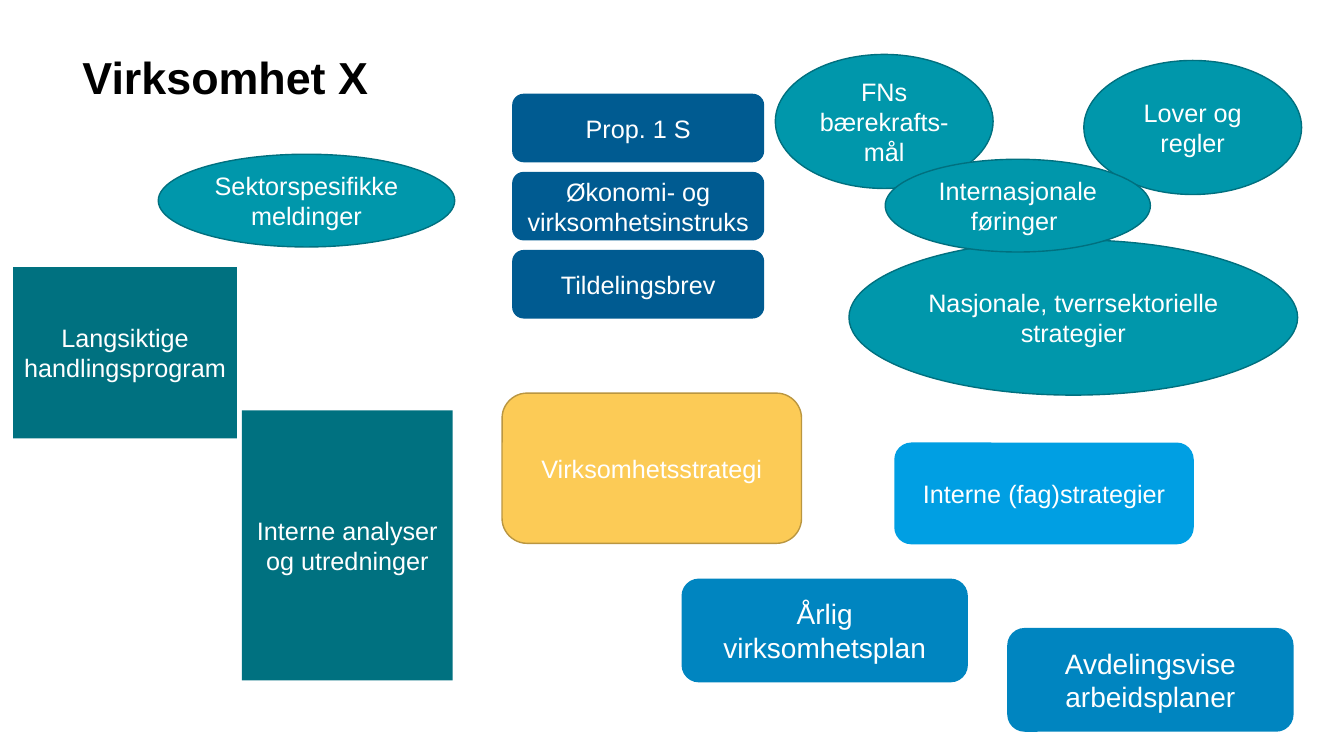
from pptx import Presentation
from pptx.dml.color import RGBColor
from pptx.enum import shapes, text
from pptx.util import Inches, Pt

WHITE = RGBColor(0xFF, 0xFF, 0xFF)
BLACK = RGBColor(0x00, 0x00, 0x00)
NAVY = RGBColor(0x00, 0x5B, 0x91)
BLUE = RGBColor(0x00, 0x85, 0xC0)
SKY = RGBColor(0x00, 0x9F, 0xE3)
TEAL = RGBColor(0x00, 0x97, 0xAB)
TEAL_EDGE = RGBColor(0x00, 0x70, 0x7F)
DARK_TEAL = RGBColor(0x00, 0x71, 0x80)
YELLOW = RGBColor(0xFC, 0xCB, 0x56)
YELLOW_EDGE = RGBColor(0xBA, 0x96, 0x40)

RECTANGLE = shapes.MSO_SHAPE.RECTANGLE
ROUNDED = shapes.MSO_SHAPE.ROUNDED_RECTANGLE
OVAL = shapes.MSO_SHAPE.OVAL


class StrategyMap:
    """Draws labelled shapes in one style on the current slide."""

    font_name = "Arial"

    def __init__(self, slide):
        self.slide = slide

    def label(self, box, words, size, color, bold=False):
        para = box.text_frame.paragraphs[0]
        para.text = words
        para.font.name = self.font_name
        para.font.size = Pt(size)
        para.font.bold = bold
        para.font.color.rgb = color
        return para

    def title(self, words, left, top, width, height):
        box = self.slide.shapes.add_textbox(*map(Inches, (left, top, width, height)))
        box.text_frame.word_wrap = True
        box.text_frame.auto_size = text.MSO_AUTO_SIZE.SHAPE_TO_FIT_TEXT
        self.label(box, words, 32, BLACK, bold=True)

    def block(self, kind, words, place, fill, edge=None, size=18):
        box = self.slide.shapes.add_shape(kind, *map(Inches, place))
        box.shadow.inherit = False
        box.fill.solid()
        box.fill.fore_color.rgb = fill
        if edge is None:
            box.line.fill.background()
        else:
            box.line.color.rgb = edge
            box.line.width = Pt(1)
        box.text_frame.word_wrap = True
        box.text_frame.vertical_anchor = text.MSO_ANCHOR.MIDDLE
        para = self.label(box, words, size, WHITE)
        para.alignment = text.PP_ALIGN.CENTER

    def oval(self, words, *place):
        self.block(OVAL, words, place, TEAL, TEAL_EDGE)

    def analysis(self, words, *place):
        self.block(RECTANGLE, words, place, DARK_TEAL)

    def plan(self, words, left, top):
        self.block(ROUNDED, words, (left, top, 2.84, 1.03), BLUE, size=20)


def main():
    deck = Presentation()
    deck.slide_width, deck.slide_height = Inches(13.33), Inches(7.5)
    page = StrategyMap(deck.slides.add_slide(deck.slide_layouts[6]))

    page.title("Virksomhet X", 0.72, 0.44, 3.47, 0.64)

    # Governing documents, stacked evenly
    documents = ("Prop. 1 S", "Økonomi- og virksomhetsinstruks", "Tildelingsbrev")
    for row, words in enumerate(documents):
        page.block(ROUNDED, words, (5.08, 0.93 + row * 1.55 / 2, 2.5, 0.68), NAVY)

    # External guidance; later ovals overlap earlier ones
    page.oval("Nasjonale, tverrsektorielle strategier", 8.42, 2.38, 4.45, 1.54)
    page.oval("Sektorspesifikke meldinger", 1.57, 1.53, 2.94, 0.92)
    page.oval("FNs bærekrafts-mål", 7.69, 0.54, 2.16, 1.33)
    page.oval("Lover og regler", 10.75, 0.6, 2.16, 1.33)
    page.oval("Internasjonale føringer ", 8.78, 1.58, 2.63, 0.92)

    # Strategies
    page.block(ROUNDED, "Virksomhetsstrategi", (4.98, 3.9, 2.97, 1.49), YELLOW, YELLOW_EDGE)
    page.block(ROUNDED, "Interne (fag)strategier", (8.87, 4.39, 2.97, 1.01), SKY)

    # Analyses and long-term programmes
    page.analysis("Interne analyser og utredninger", 2.4, 4.07, 2.09, 2.68)
    page.analysis("Langsiktige handlingsprogram", 0.13, 2.65, 2.22, 1.7)

    # Plans
    page.plan("Årlig virksomhetsplan", 6.76, 5.74)
    page.plan("Avdelingsvise arbeidsplaner", 9.99, 6.23)

    deck.save("out.pptx")


if __name__ == "__main__":
    main()
